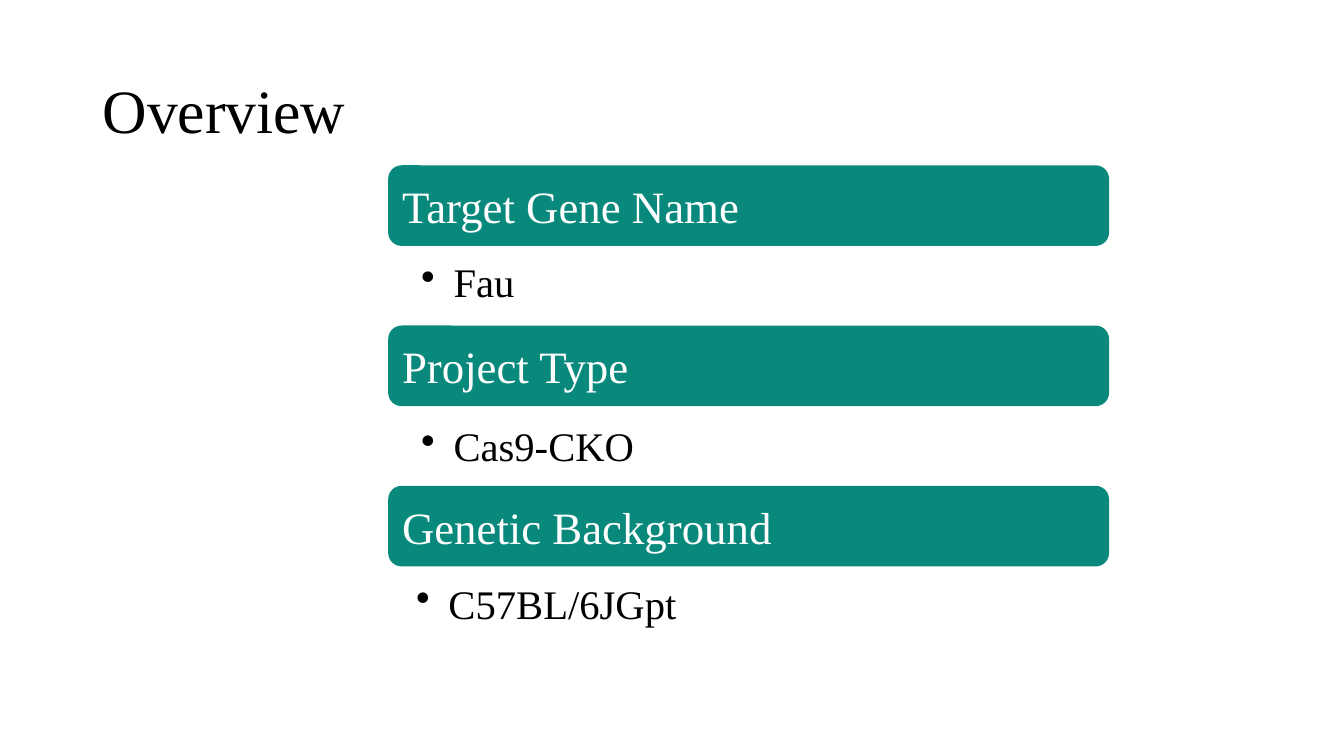
import pptx
import pptx.util
import pptx.dml.color
import pptx.enum.shapes
import pptx.enum.text
from dataclasses import dataclass
from lxml import etree

Inches = pptx.util.Inches


@dataclass(frozen=True)
class Theme:
    font: str = "Times New Roman"
    ink: str = "000000"
    paper: str = "FFFFFF"
    teal: str = "08897C"
    title_size: int = 44
    heading_size: int = 32
    detail_size: int = 29


theme = Theme()


def write(shape, text, size, color, anchor):
    """Fill a shape with one left-aligned paragraph and return it."""
    frame = shape.text_frame
    frame.word_wrap = True
    frame.vertical_anchor = anchor
    paragraph = frame.paragraphs[0]
    paragraph.text = text
    paragraph.alignment = pptx.enum.text.PP_ALIGN.LEFT
    paragraph.font.name = theme.font
    paragraph.font.size = pptx.util.Pt(size)
    paragraph.font.color.rgb = pptx.dml.color.RGBColor.from_string(color)
    return paragraph


def add_bullet(paragraph, margin, hanging):
    properties = paragraph._p.get_or_add_pPr()
    properties.set("marL", str(Inches(margin)))
    properties.set("indent", str(-Inches(hanging)))
    bullet = etree.Element(pptx.oxml.ns.qn("a:buChar"), char="•")
    properties.insert(0, bullet)


deck = pptx.Presentation()
deck.slide_width, deck.slide_height = Inches(13.33), Inches(7.5)
slide = deck.slides.add_slide(deck.slide_layouts[6])
middle = pptx.enum.text.MSO_ANCHOR.MIDDLE
top = pptx.enum.text.MSO_ANCHOR.TOP

# Title
title = slide.shapes.add_textbox(Inches(0.92), Inches(0.4), Inches(11.5), Inches(1.45))
write(title, "Overview", theme.title_size, theme.ink, middle).line_spacing = 0.9

# Grid: one heading bar per row, with its detail below
bar_left, bar_width, bar_height = 3.85, 7.15, 0.8
first_row, row_pitch = 1.64, 1.59
detail_width, detail_height = 7.1, 0.59

# Heading, detail, detail's left and drop from the top of its row
sections = [
    ("Target Gene Name", "Fau", 3.9, 0.86),
    ("Project Type", "Cas9-CKO", 3.9, 0.9),
    ("Genetic Background", "C57BL/6JGpt", 3.85, 0.87),
]

for row, (heading, detail, detail_left, detail_drop) in enumerate(sections):
    row_top = first_row + row * row_pitch

    # Heading bar
    bar = slide.shapes.add_shape(
        pptx.enum.shapes.MSO_SHAPE.ROUNDED_RECTANGLE,
        Inches(bar_left), Inches(row_top), Inches(bar_width), Inches(bar_height))
    bar.shadow.inherit = False
    bar.fill.solid()
    bar.fill.fore_color.rgb = pptx.dml.color.RGBColor.from_string(theme.teal)
    bar.line.fill.background()
    write(bar, heading, theme.heading_size, theme.paper, middle)

    # Bulleted detail
    note = slide.shapes.add_textbox(
        Inches(detail_left), Inches(row_top + detail_drop),
        Inches(detail_width), Inches(detail_height))
    add_bullet(write(note, detail, theme.detail_size, theme.ink, top), 0.5, 0.32)
    note.text_frame.auto_size = pptx.enum.text.MSO_AUTO_SIZE.SHAPE_TO_FIT_TEXT

deck.save("out.pptx")
